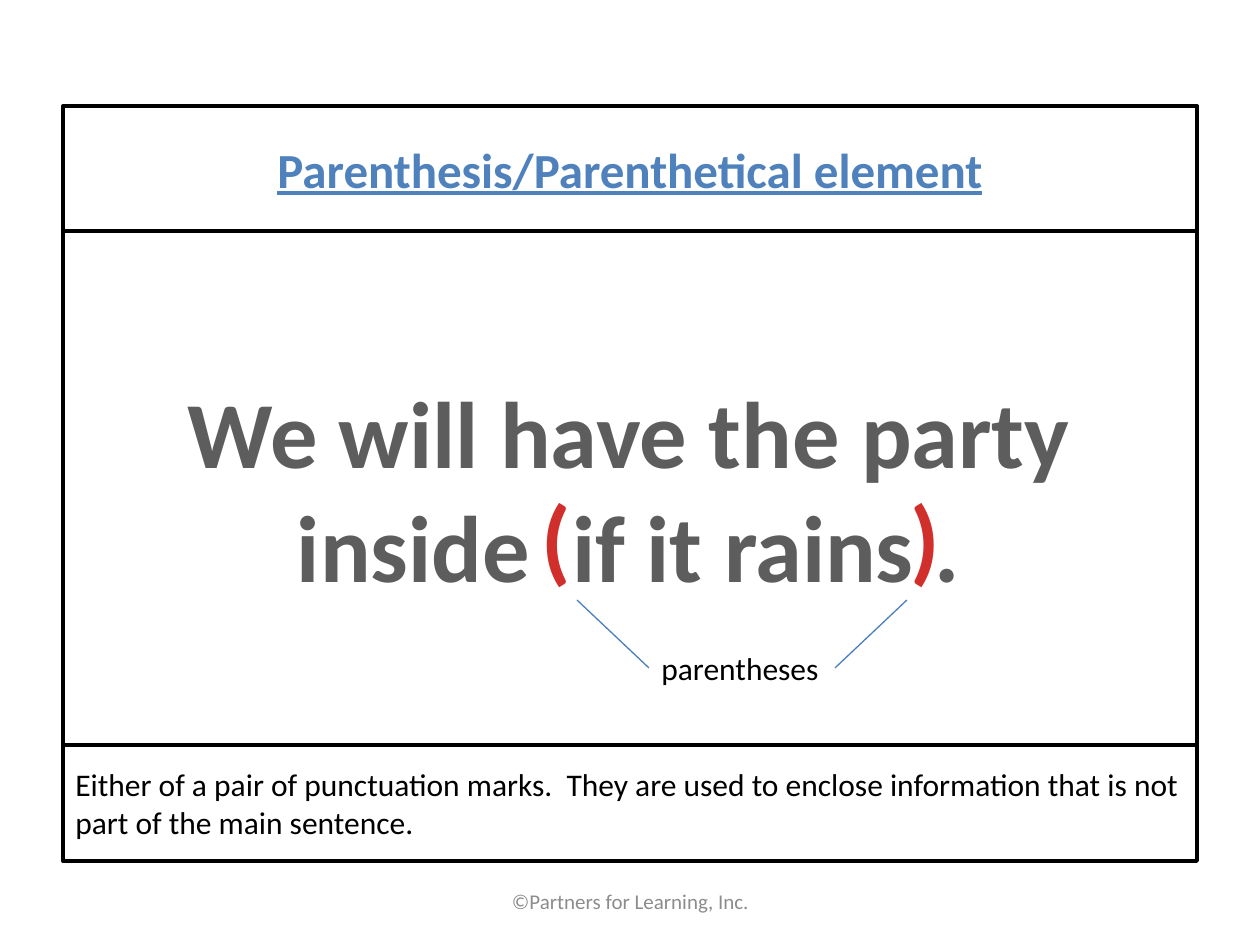
import pptx
import pptx.util
import pptx.dml.color
import pptx.enum.shapes
import pptx.enum.text
import pptx.oxml.ns
from dataclasses import dataclass
from lxml import etree

PX = 914400 // 126
ALIGN = pptx.enum.text.PP_ALIGN
ANCHOR = pptx.enum.text.MSO_ANCHOR


@dataclass(frozen=True)
class Theme:
    font: str = "Calibri"
    black: str = "000000"
    heading: str = "4F81BD"
    sentence: str = "5D5D5D"
    mark: str = "D02F2C"
    pointer: str = "4B7EBC"
    muted: str = "8C8C8C"
    heading_size: int = 28
    sentence_size: int = 54
    body_size: int = 18
    footer_size: int = 12
    frame_width: float = 2.25
    pointer_width: float = 0.75


def px(n):
    return pptx.util.Emu(n * PX)


def rgb(color):
    return pptx.dml.color.RGBColor.from_string(color)


class Builder:
    def __init__(self, s, theme):
        self.s = s
        self.theme = theme

    def fill_text(self, sp, lines, size, color, align=ALIGN.CENTER, bold=False, underline=False):
        tf = sp.text_frame
        tf.text = "\n".join(lines)
        for p in tf.paragraphs:
            p.alignment = align
            p.font.name = self.theme.font
            p.font.size = pptx.util.Pt(size)
            p.font.bold = bold
            p.font.underline = underline
            p.font.color.rgb = rgb(color)

    def frame(self, x, y, w, h):
        sp = self.s.shapes.add_shape(
            pptx.enum.shapes.MSO_SHAPE.RECTANGLE, px(x), px(y), px(w), px(h))
        sp.shadow.inherit = False
        sp.fill.background()
        sp.line.color.rgb = rgb(self.theme.black)
        sp.line.width = pptx.util.Pt(self.theme.frame_width)
        sp.text_frame.word_wrap = True
        sp.text_frame.vertical_anchor = ANCHOR.MIDDLE
        return sp

    def text(self, x, y, w, h, lines, size, color, anchor=ANCHOR.TOP, **style):
        sp = self.s.shapes.add_textbox(px(x), px(y), px(w), px(h))
        sp.text_frame.word_wrap = False
        sp.text_frame.vertical_anchor = anchor
        self.fill_text(sp, lines, size, color, **style)
        return sp

    def pointer(self, x, y, label, side):
        c = self.s.shapes.add_connector(
            pptx.enum.shapes.MSO_CONNECTOR.STRAIGHT, px(x), px(y), px(x), px(y))
        c.end_connect(label, side)
        c.line.color.rgb = rgb(self.theme.pointer)
        c.line.width = pptx.util.Pt(self.theme.pointer_width)
        etree.SubElement(c._element.spPr, pptx.oxml.ns.qn("a:effectLst"))


def main():
    prs = pptx.Presentation()
    prs.slide_width, prs.slide_height = pptx.util.Inches(10), pptx.util.Inches(7.5)
    s = prs.slides.add_slide(prs.slide_layouts[6])
    t = Theme()
    b = Builder(s, t)

    edges = [106, 231, 745, 861]
    heading, _, definition = [
        b.frame(63, top, 1134, bottom - top) for top, bottom in zip(edges, edges[1:])]
    b.fill_text(heading, ["Parenthesis/Parenthetical element"],
                t.heading_size, t.heading, bold=True, underline=True)
    b.fill_text(definition, ["Either of a pair of punctuation marks.  They are used to enclose "
                             "information that is not part of the main sentence."],
                t.body_size, t.black, align=ALIGN.LEFT)
    b.text(431, 876, 399, 50, ["©Partners for Learning, Inc."],
           t.footer_size, t.muted, anchor=ANCHOR.MIDDLE)

    b.text(171, 368, 916, 242, ["We will have the party", "inside  if it rains ."],
           t.sentence_size, t.sentence, bold=True)
    for mark, center in (("(", 556), (")", 925)):
        b.text(center - 30, 473, 60, 127, [mark], t.sentence_size, t.mark, bold=True)

    label = b.text(649, 643, 186, 50, ["parentheses"], t.body_size, t.black, align=ALIGN.LEFT)
    b.pointer(577, 600, label, 1)
    b.pointer(907, 600, label, 3)

    prs.save("out.pptx")


if __name__ == "__main__":
    main()
